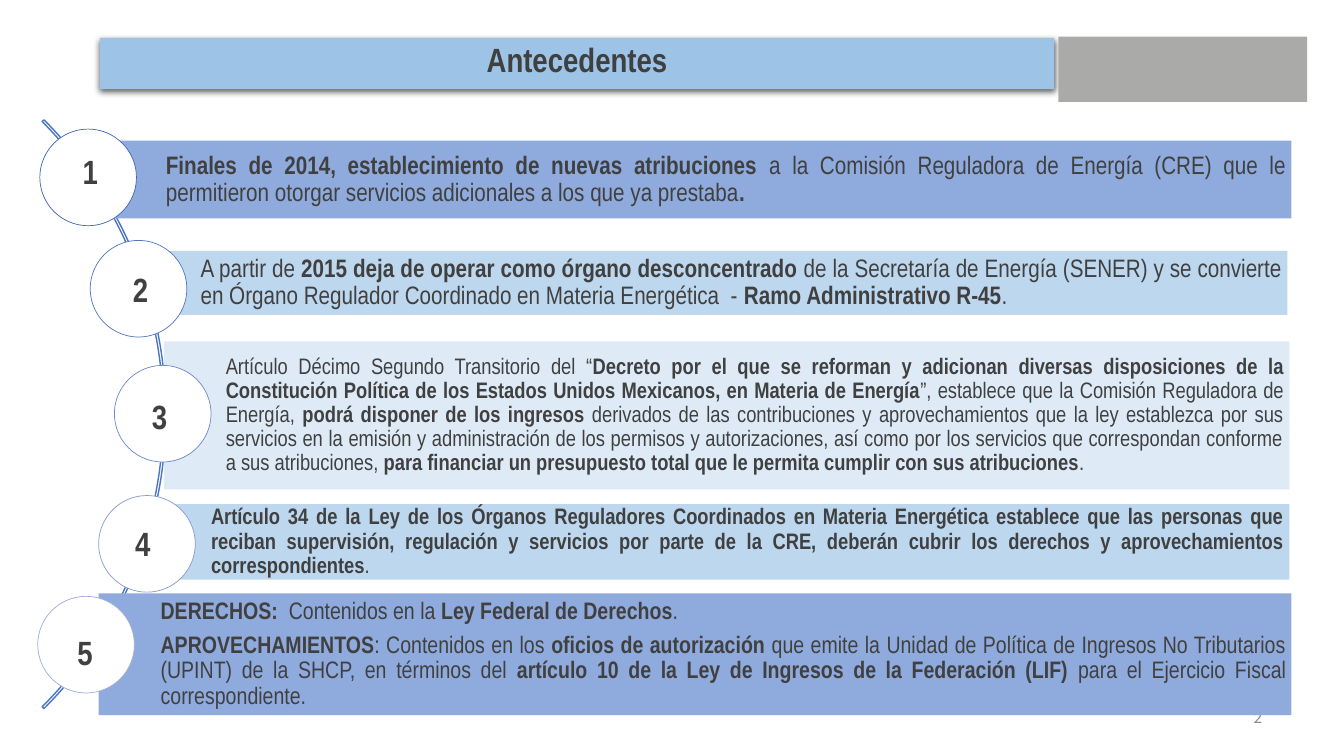
import lxml.etree
import pptx
import pptx.dml.color
import pptx.enum.shapes
import pptx.enum.text
import pptx.oxml.ns
import pptx.util

PX = 9525  # EMU per px, 96 px to the inch
FONT = "Arial Narrow"
COLORS = {
    "title": "9DC3E6", "text": "404040", "page": "8C8C8C", "logo": "AAAAA9",
    "arc": "4A75C5", "circle": "FFFFFF",
    "strong": "8FAADC", "medium": "BDD7EE", "light": "DEEBF7",
}
SHAPE = pptx.enum.shapes.MSO_SHAPE
ALIGN = pptx.enum.text.PP_ALIGN
ANCHOR = pptx.enum.text.MSO_ANCHOR


def draw(preset, box, fill=None, line=None, width=1):
    """Add a flat preset shape; box is left, top, width, height in px."""
    shape = slide.shapes.add_shape(preset, *[n * PX for n in box])
    shape.shadow.inherit = False
    if fill:
        shape.fill.solid()
        shape.fill.fore_color.rgb = pptx.dml.color.RGBColor.from_string(fill)
    else:
        shape.fill.background()
    if line:
        shape.line.color.rgb = pptx.dml.color.RGBColor.from_string(line)
        shape.line.width = pptx.util.Pt(width)
    else:
        shape.line.fill.background()
    return shape


def write(frame, paragraphs, size, align, anchor, insets=(10, 5, 10, 5),
          color="text", font=FONT, spacing=1.0, after=0):
    """Fill a text frame; words between asterisks are bold."""
    frame_format = {
        "word_wrap": True, "auto_size": pptx.enum.text.MSO_AUTO_SIZE.NONE,
        "vertical_anchor": anchor,
        "margin_left": insets[0] * PX, "margin_top": insets[1] * PX,
        "margin_right": insets[2] * PX, "margin_bottom": insets[3] * PX,
    }
    for name, value in frame_format.items():
        setattr(frame, name, value)
    for index, text in enumerate(paragraphs):
        paragraph = frame.add_paragraph() if index else frame.paragraphs[0]
        paragraph_format = {
            "alignment": align, "line_spacing": spacing,
            "space_before": 0, "space_after": pptx.util.Pt(after),
        }
        for name, value in paragraph_format.items():
            setattr(paragraph, name, value)
        for part, words in enumerate(text.split("*")):
            if words:
                run = paragraph.add_run()
                run.text = words
                run_format = {"name": font, "size": pptx.util.Pt(size), "bold": part % 2 == 1}
                for name, value in run_format.items():
                    setattr(run.font, name, value)
                run.font.color.rgb = pptx.dml.color.RGBColor.from_string(COLORS[color])


deck = pptx.Presentation()
deck.slide_width, deck.slide_height = 1280 * PX, 720 * PX
slide = deck.slides.add_slide(deck.slide_layouts[5])

# Title bar with a soft shadow below
title = slide.shapes.title
title_box = {"left": 95, "top": 36, "width": 909, "height": 49}
for side, length in title_box.items():
    setattr(title, side, length * PX)
title.fill.solid()
title.fill.fore_color.rgb = pptx.dml.color.RGBColor.from_string(COLORS["title"])
write(title.text_frame, ["*Antecedentes*"], 24, ALIGN.CENTER, ANCHOR.TOP, spacing=0.9)
title.element.spPr.append(lxml.etree.fromstring(
    f'<a:effectLst {pptx.oxml.ns.nsdecls("a")}>'
    '<a:outerShdw blurRad="57150" dist="19050" dir="5400000" algn="ctr" rotWithShape="0">'
    '<a:srgbClr val="000000"><a:alpha val="63000"/></a:srgbClr>'
    '</a:outerShdw></a:effectLst>'))

# Plain block in the logo's place
draw(SHAPE.RECTANGLE, (1008, 35, 237, 62), COLORS["logo"])

# Page number, partly behind the last bar
page = slide.shapes.add_textbox(*[n * PX for n in (1192, 667, 20, 31)])
write(page.text_frame, ["2"], 12, ALIGN.RIGHT, ANCHOR.MIDDLE, (0, 5, 10, 5), "page", "Calibri")

# Arc that links the circles, from 315 to 45 degrees
arc = draw(SHAPE.BLOCK_ARC, (-635, -2, 793, 793), line=COLORS["arc"])
for index, adjustment in enumerate((189, 27, 0.003)):
    arc.adjustments[index] = adjustment

# Steps: bar, fill, circle corner, circle line, number centre and top, size, text
CIRCLE = 92
LABEL = 48
steps = [
    ((99, 134, 1131, 74), "strong", (38, 123), "3E67B2", (86, 139), 18, [
        "*Finales de 2014, establecimiento de nuevas atribuciones *a la Comisión Reguladora "
        "de Energía (CRE) que le permitieron otorgar servicios adicionales a los que ya "
        "prestaba*.*"]),
    ((132, 239, 1094, 61), "medium", (86, 229), "5176C0", (134, 251), 18, [
        "A partir de *2015 deja de operar como órgano desconcentrado *de la Secretaría de "
        "Energía (SENER) y se convierte en Órgano Regulador Coordinado en Materia "
        "Energética  - *Ramo Administrativo R-45*."]),
    ((156, 325, 1072, 141), "light", (109, 348), "6C88C8", (152, 372), 16, [
        "Artículo Décimo Segundo Transitorio del “*Decreto por el que se reforman y adicionan "
        "diversas disposiciones de la Constitución Política de los Estados Unidos Mexicanos, "
        "en Materia de Energía*”, establece que la Comisión Reguladora de Energía, *podrá "
        "disponer de los ingresos *derivados de las contribuciones y aprovechamientos que la "
        "ley establezca por sus servicios en la emisión y administración de los permisos y "
        "autorizaciones, así como por los servicios que correspondan conforme a sus "
        "atribuciones, *para financiar un presupuesto total que le permita cumplir con sus "
        "atribuciones*."]),
    ((142, 480, 1086, 72), "medium", (94, 472), "869BD0", (136, 493), 16, [
        "*Artículo 34 de la Ley de los Órganos Reguladores Coordinados en Materia Energética "
        "establece que las personas que reciban supervisión, regulación y servicios por parte "
        "de la CRE, deberán cubrir los derechos y aprovechamientos correspondientes*."]),
    ((94, 565, 1136, 116), "strong", (36, 568), "9FAED8", (81, 597), 17, [
        "*DERECHOS:  *Contenidos en la *Ley Federal de Derechos*.",
        "*APROVECHAMIENTOS*: Contenidos en los *oficios de autorización *que emite la Unidad "
        "de Política de Ingresos No Tributarios (UPINT) de la SHCP, en términos del *artículo "
        "10 de la Ley de Ingresos de la Federación (LIF)* para el Ejercicio Fiscal "
        "correspondiente."]),
]
for number, (box, fill, corner, outline, (center, top), size, texts) in enumerate(steps, 1):
    bar = draw(SHAPE.RECTANGLE, box, COLORS[fill])
    write(bar.text_frame, texts, size, ALIGN.JUSTIFY, ANCHOR.MIDDLE, (59, 4, 5, 4),
          spacing=0.9, after=round(0.35 * size))
    draw(SHAPE.OVAL, (*corner, CIRCLE, CIRCLE), COLORS["circle"], outline, 0.5)
    label = slide.shapes.add_textbox(
        *[n * PX for n in (center - LABEL // 2, top, LABEL, LABEL)])
    write(label.text_frame, [f"*{number}*"], 24, ALIGN.CENTER, ANCHOR.TOP)

deck.save("out.pptx")
